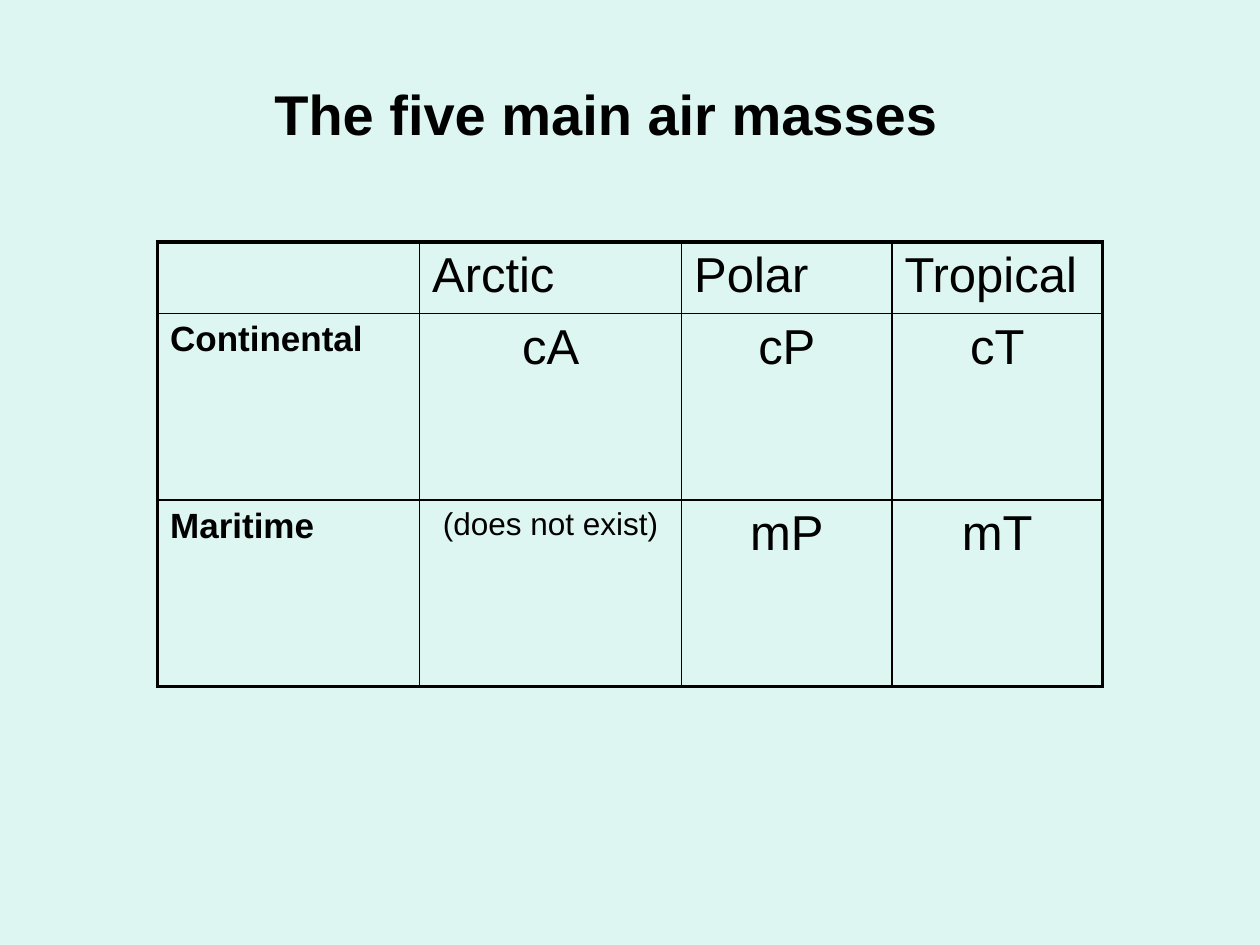
"""Build the slide on the five main air masses."""
import dataclasses
import typing

import pptx
import pptx.dml.color
import pptx.enum.text
import pptx.oxml
import pptx.oxml.ns
import pptx.util

Inches = pptx.util.Inches
Pt = pptx.util.Pt
Align = pptx.enum.text.PP_ALIGN


@dataclasses.dataclass(frozen=True)
class Theme:
    font: str = "Arial"
    ink: str = "000000"
    back: str = "DEF6F1"
    title: float = 32
    large: float = 28
    label: float = 20
    note: float = 18
    thin: float = 1
    thick: float = 2.25


class Entry(typing.NamedTuple):
    text: str
    size: float
    bold: bool = False
    align: Align = Align.LEFT


THEME = Theme()
COLS = (2.08, 2.08, 1.67, 1.67)
ROWS = (0.57, 1.48, 1.48)


def head(text: str) -> Entry:
    return Entry(text, THEME.large)


def label(text: str) -> Entry:
    return Entry(text, THEME.label, bold=True)


def mass(text: str, size: float = THEME.large) -> Entry:
    return Entry(text, size, align=Align.CENTER)


GRID = (
    (head(""), head("Arctic"), head("Polar"), head("Tropical")),
    (label("Continental"), mass("cA"), mass("cP"), mass("cT")),
    (label("Maritime"), mass("(does not exist)", THEME.note), mass("mP"), mass("mT")),
)


def color(code: str) -> pptx.dml.color.RGBColor:
    return pptx.dml.color.RGBColor.from_string(code)


def write(frame, text: str, *, size: float, bold: bool = False,
          align: Align = Align.LEFT) -> None:
    para = frame.paragraphs[0]
    para.alignment = align
    run = para.add_run()
    run.text = text
    run.font.name = THEME.font
    run.font.size = Pt(size)
    run.font.bold = bold
    run.font.color.rgb = color(THEME.ink)


def border(cell, edges: dict[str, bool]) -> None:
    props = cell._tc.get_or_add_tcPr()
    for side, outer in edges.items():
        width = Pt(THEME.thick if outer else THEME.thin)
        props.append(pptx.oxml.parse_xml(
            f'<a:ln{side} {pptx.oxml.ns.nsdecls("a")} w="{width}"><a:solidFill>'
            f'<a:srgbClr val="{THEME.ink}"/></a:solidFill></a:ln{side}>'))


def draw_title(slide) -> None:
    box = slide.shapes.add_textbox(Inches(2.08), Inches(0.58), Inches(5.83), Inches(0.63))
    box.text_frame.word_wrap = True
    write(box.text_frame, "The five main air masses", size=THEME.title, bold=True)


def draw_table(slide) -> None:
    table = slide.shapes.add_table(
        len(ROWS), len(COLS), Inches(1.25), Inches(1.92),
        Inches(sum(COLS)), Inches(sum(ROWS))).table
    table.first_row = table.horz_banding = False
    for col, width in zip(table.columns, COLS):
        col.width = Inches(width)
    for row, height in zip(table.rows, ROWS):
        row.height = Inches(height)
    for r, line in enumerate(GRID):
        for c, entry in enumerate(line):
            cell = table.cell(r, c)
            border(cell, {"L": c == 0, "R": c == len(COLS) - 1,
                          "T": r == 0, "B": r == len(ROWS) - 1})
            cell.fill.background()
            if entry.text:
                write(cell.text_frame, entry.text, size=entry.size,
                      bold=entry.bold, align=entry.align)


def main() -> None:
    deck = pptx.Presentation()
    deck.slide_width, deck.slide_height = Inches(10), Inches(7.5)
    slide = deck.slides.add_slide(deck.slide_layouts[6])
    slide.background.fill.solid()
    slide.background.fill.fore_color.rgb = color(THEME.back)
    draw_table(slide)
    draw_title(slide)
    deck.save("out.pptx")


if __name__ == "__main__":
    main()
